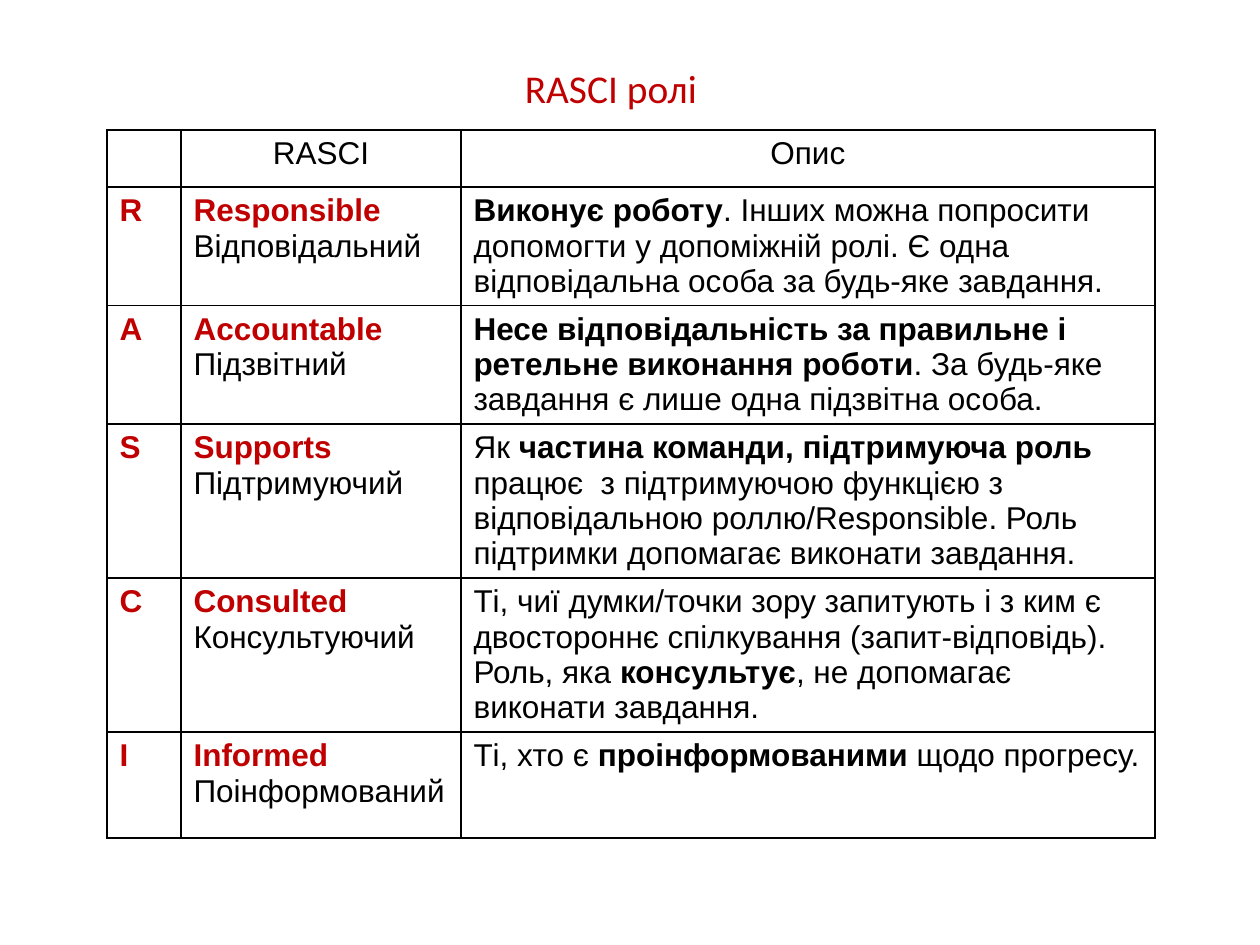
import dataclasses

import pptx
import pptx.dml.color
import pptx.enum.text
import pptx.oxml
import pptx.oxml.ns
import pptx.util

EMU_PER_PX = 914400 / 126
ALIGN = pptx.enum.text.PP_ALIGN


@dataclasses.dataclass(frozen=True)
class Theme:
    accent: str = "C00000"
    ink: str = "000000"
    paper: str = "FFFFFF"
    title_font: str = "Calibri"
    body_font: str = "Arial"
    title_size: float = 22.5
    body_size: float = 18
    border_width: float = 1


@dataclasses.dataclass(frozen=True)
class Run:
    text: str
    bold: bool = False
    accent: bool = False


def px(value):
    return pptx.util.Emu(round(value * EMU_PER_PX))


class SlideBuilder:
    def __init__(self, slide, theme):
        self.slide = slide
        self.theme = theme

    def add_run(self, paragraph, content, font_name, size):
        run = paragraph.add_run()
        run.text = content.text
        font = run.font
        font.name = font_name
        font.size = pptx.util.Pt(size)
        font.bold = content.bold
        color = self.theme.accent if content.accent else self.theme.ink
        font.color.rgb = pptx.dml.color.RGBColor.from_string(color)

    def title(self, text, left, top, width, height):
        shape = self.slide.shapes.title
        shape.left, shape.top = px(left), px(top)
        shape.width, shape.height = px(width), px(height)
        frame = shape.text_frame
        frame.word_wrap = True
        frame.vertical_anchor = pptx.enum.text.MSO_ANCHOR.MIDDLE
        paragraph = frame.paragraphs[0]
        paragraph.alignment = ALIGN.CENTER
        paragraph.line_spacing = 0.9
        self.add_run(paragraph, Run(text, accent=True),
                     self.theme.title_font, self.theme.title_size)

    def border(self, cell):
        properties = cell._tc.get_or_add_tcPr()
        width = pptx.util.Pt(self.theme.border_width)
        for side in ("lnL", "lnR", "lnT", "lnB"):
            properties.append(pptx.oxml.parse_xml(
                f'<a:{side} {pptx.oxml.ns.nsdecls("a")} w="{width}"><a:solidFill>'
                f'<a:srgbClr val="{self.theme.ink}"/></a:solidFill></a:{side}>'))

    def cell(self, cell, paragraphs, alignment):
        self.border(cell)
        cell.fill.solid()
        cell.fill.fore_color.rgb = pptx.dml.color.RGBColor.from_string(self.theme.paper)
        frame = cell.text_frame
        for index, runs in enumerate(paragraphs):
            paragraph = frame.add_paragraph() if index else frame.paragraphs[0]
            paragraph.alignment = alignment
            for run in runs:
                self.add_run(paragraph, run, self.theme.body_font, self.theme.body_size)

    def table(self, rows, left, top, column_widths, row_heights):
        """Each cell is a list of paragraphs, and each paragraph a list of runs."""
        shape = self.slide.shapes.add_table(
            len(rows), len(column_widths), px(left), px(top),
            px(sum(column_widths)), px(sum(row_heights)))
        table = shape.table
        table.first_row = table.horz_banding = False
        for column, width in zip(table.columns, column_widths):
            column.width = px(width)
        for row, height in zip(table.rows, row_heights):
            row.height = px(height)
        for row_index, row in enumerate(rows):
            alignment = ALIGN.LEFT if row_index else ALIGN.CENTER
            for column_index, paragraphs in enumerate(row):
                self.cell(table.cell(row_index, column_index), paragraphs, alignment)


ROLES = [
    ("Responsible", "Відповідальний", [
        Run("Виконує роботу", bold=True),
        Run(". Інших можна попросити допомогти у допоміжній ролі. "
            "Є одна відповідальна особа за будь-яке завдання.")]),
    ("Accountable", "Підзвітний", [
        Run("Несе відповідальність за правильне і ретельне виконання роботи", bold=True),
        Run(". За будь-яке завдання є лише одна підзвітна особа.")]),
    ("Supports", "Підтримуючий", [
        Run("Як "),
        Run("частина команди, підтримуюча роль ", bold=True),
        Run("працює  з підтримуючою функцією з відповідальною роллю/Responsible. "
            "Роль підтримки допомагає виконати завдання.")]),
    ("Consulted", "Консультуючий", [
        Run("Ті, чиї думки/точки зору запитують і з ким є двостороннє спілкування "
            "(запит-відповідь). Роль, яка "),
        Run("консультує", bold=True),
        Run(", не допомагає виконати завдання.")]),
    ("Informed", "Поінформований", [
        Run("Ті, хто є "),
        Run("проінформованими", bold=True),
        Run(" щодо прогресу.")]),
]


def role_row(name, translation, description):
    return [
        [[Run(name[0], bold=True, accent=True)]],
        [[Run(name, bold=True, accent=True)], [Run(translation)]],
        [description],
    ]


def main():
    presentation = pptx.Presentation()
    presentation.slide_width, presentation.slide_height = px(1260), px(945)
    slide = presentation.slides.add_slide(presentation.slide_layouts[5])
    builder = SlideBuilder(slide, Theme())
    builder.title("RASCI ролі", 144, 52, 934, 77)
    header = [[], [[Run("RASCI")]], [[Run("Опис")]]]
    builder.table([header] + [role_row(*role) for role in ROLES], 107, 130,
                  column_widths=[74, 280, 694],
                  row_heights=[57, 118, 118, 154, 154, 106])
    presentation.save("out.pptx")


if __name__ == "__main__":
    main()
